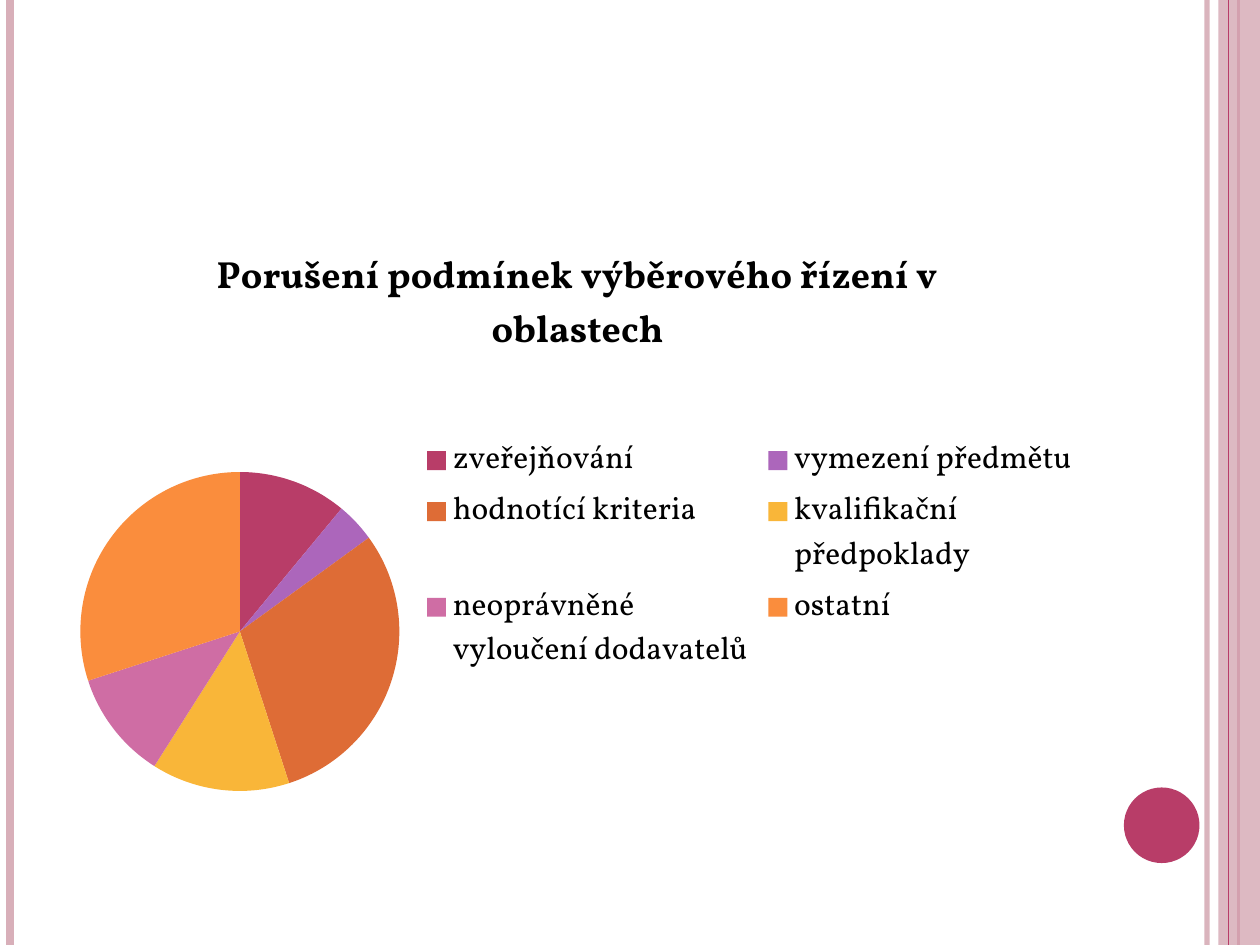
from lxml import etree
from pptx import Presentation
from pptx.chart.data import CategoryChartData
from pptx.dml.color import RGBColor
from pptx.enum.chart import XL_CHART_TYPE, XL_LEGEND_POSITION
from pptx.enum.shapes import MSO_CONNECTOR, MSO_SHAPE
from pptx.oxml.ns import qn
from pptx.util import Inches, Pt

PIE = XL_CHART_TYPE.PIE
RIGHT = XL_LEGEND_POSITION.RIGHT
STRAIGHT = MSO_CONNECTOR.STRAIGHT
RECT = MSO_SHAPE.RECTANGLE
OVAL = MSO_SHAPE.OVAL

FONT = "Vollkorn"
PINK, ROSE = "D8AFB9", "B83D68"
TITLE = "Porušení podmínek výběrového řízení v oblastech"
PARTS = [
    ("zveřejňování", 11, ROSE),
    ("vymezení předmětu", 4, "AC66BB"),
    ("hodnotící kriteria", 30, "DE6C36"),
    ("kvalifikační předpoklady", 14, "F9B639"),
    ("neoprávněné vyloučení dodavatelů", 11, "CF6DA4"),
    ("ostatní", 30, "FA8D3D"),
]


def paint(fill, color, alpha=100):
    fill.solid()
    fill.fore_color.rgb = RGBColor.from_string(color)
    if alpha < 100:
        tone = fill._xPr.find(".//" + qn("a:srgbClr"))
        etree.SubElement(tone, qn("a:alpha"), val=str(alpha * 1000))


def add_rule(slide, x, color, width, alpha=100):
    """Draw a vertical line over the full slide height."""
    rule = slide.shapes.add_connector(
        STRAIGHT, Inches(x), 0, Inches(x), Inches(7.5))
    rule.line.width = Pt(width)
    paint(rule.line.fill, color, alpha)
    etree.SubElement(rule._element.spPr, qn("a:effectLst"))


def add_block(slide, kind, box, color, alpha=100):
    block = slide.shapes.add_shape(kind, *map(Inches, box))
    block.shadow.inherit = False
    block.line.fill.background()
    paint(block.fill, color, alpha)


def set_font(font, size, bold):
    font.name = FONT
    font.size = Pt(size)
    font.bold = bold
    paint(font.fill, "000000")


def add_pie(slide, box):
    names, values, colors = zip(*PARTS)
    data = CategoryChartData()
    data.categories = names
    data.add_series(TITLE, values)
    chart = slide.shapes.add_chart(PIE, *map(Inches, box), data).chart
    set_font(chart.font, 18, False)

    # Title
    chart.has_title = True
    chart.chart_title.include_in_layout = False
    frame = chart.chart_title.text_frame
    frame.text = TITLE
    set_font(frame.paragraphs[0].runs[0].font, 21.6, True)

    # Slices
    plot = chart.plots[0]
    plot.vary_by_categories = True
    for i, color in enumerate(colors):
        paint(plot.series[0].points[i].format.fill, color)

    # Legend
    chart.has_legend = True
    chart.legend.position = RIGHT
    chart.legend.include_in_layout = False
    set_font(chart.legend.font, 18, False)


def main():
    deck = Presentation()
    deck.slide_width, deck.slide_height = Inches(10), Inches(7.5)
    slide = deck.slides.add_slide(deck.slide_layouts[6])

    # Side bands
    add_rule(slide, 9.58, PINK, 3, 93)
    add_rule(slide, 0.08, PINK, 4.5)
    add_rule(slide, 9.83, ROSE, 1.5)
    add_block(slide, RECT, (9.67, 0, 0.33, 7.5), PINK, 87)
    add_rule(slide, 9.75, ROSE, 0.75)
    add_block(slide, OVAL, (8.92, 6.25, 0.6, 0.6), ROSE)

    # Chart
    add_pie(slide, (0.5, 1.75, 8.17, 5.33))
    deck.save("out.pptx")


if __name__ == "__main__":
    main()
